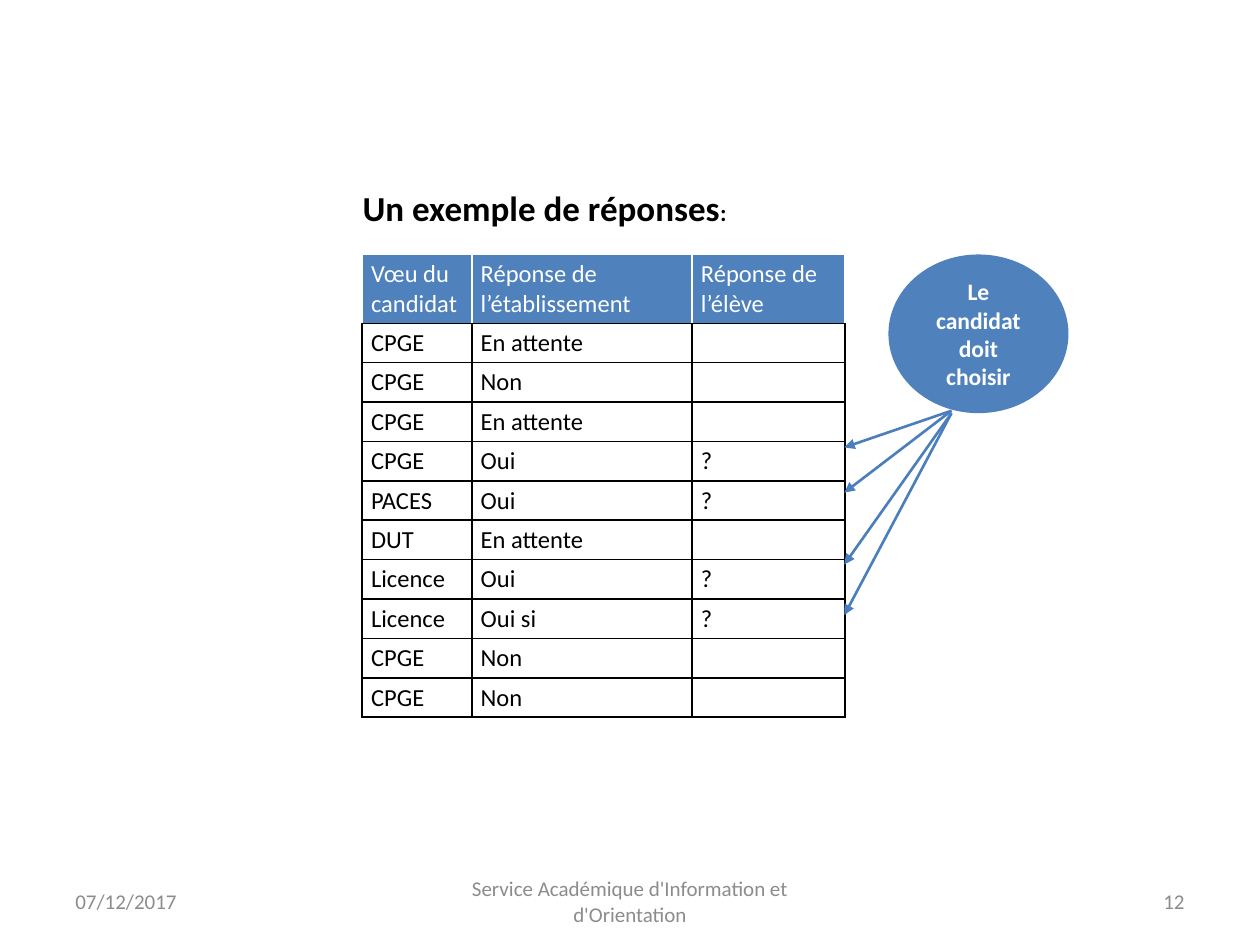
from lxml.etree import SubElement
from pptx import Presentation
from pptx.dml.color import RGBColor
from pptx.enum.shapes import MSO_CONNECTOR, MSO_SHAPE
from pptx.enum.text import MSO_ANCHOR, PP_ALIGN
from pptx.oxml.ns import qn
from pptx.util import Cm, Pt

BLUE = RGBColor(0x4F, 0x81, 0xBD)
ARROW_BLUE = RGBColor(0x4B, 0x7E, 0xBC)
GREY = RGBColor(0x8C, 0x8C, 0x8C)
BLACK = RGBColor(0, 0, 0)
WHITE = RGBColor(0xFF, 0xFF, 0xFF)


def write(frame, text, size=14, color=BLACK, bold=False, align=PP_ALIGN.LEFT):
    frame.word_wrap = True
    paragraph = frame.paragraphs[0]
    paragraph.alignment = align
    if not text:
        SubElement(paragraph._p, qn("a:endParaRPr"), sz=str(size * 100))
        return
    run = paragraph.add_run()
    run.text = text
    run.font.name = "Calibri"
    run.font.size = Pt(size)
    run.font.bold = bold
    run.font.color.rgb = color


def draw_borders(cell, edges):
    properties = cell._tc.get_or_add_tcPr()
    for position, (edge, color) in enumerate(edges.items()):
        border = SubElement(properties, qn("a:" + edge), w=str(Pt(1)))
        fill = SubElement(border, qn("a:solidFill"))
        SubElement(fill, qn("a:srgbClr"), val=str(color))
        properties.insert(position, border)


prs = Presentation()
prs.slide_width = Cm(25.4)
prs.slide_height = Cm(19.05)
slide = prs.slides.add_slide(prs.slide_layouts[6])

footers = [
    ("07/12/2017", 1.27, 5.93, PP_ALIGN.LEFT),
    ("Service Académique d'Information et d'Orientation", 8.68, 8.04, PP_ALIGN.CENTER),
    ("12", 18.2, 5.93, PP_ALIGN.RIGHT),
]
for text, left, width, align in footers:
    footer = slide.shapes.add_textbox(Cm(left), Cm(17.66), Cm(width), Cm(1.01))
    footer.text_frame.vertical_anchor = MSO_ANCHOR.MIDDLE
    write(footer.text_frame, text, size=12, color=GREY, align=align)

answers = [
    ("Vœu du candidat", "Réponse de l’établissement", "Réponse de l’élève"),
    ("CPGE", "En attente", ""),
    ("CPGE", "Non", ""),
    ("CPGE", "En attente", ""),
    ("CPGE", "Oui", "?"),
    ("PACES", "Oui", "?"),
    ("DUT", "En attente", ""),
    ("Licence", "Oui", "?"),
    ("Licence", "Oui si", "?"),
    ("CPGE", "Non", ""),
    ("CPGE", "Non", ""),
]
column_widths = [2.21, 4.44, 3.08]
header_height, row_height = 1.38, 0.79
table = slide.shapes.add_table(
    len(answers), len(column_widths), Cm(7.3), Cm(5.13),
    Cm(sum(column_widths)), Cm(header_height + row_height * (len(answers) - 1)),
).table
for column, width in zip(table.columns, column_widths):
    column.width = Cm(width)
for index, answer in enumerate(answers):
    header = index == 0
    table.rows[index].height = Cm(header_height if header else row_height)
    side = WHITE if header else BLACK
    for cell, text in zip(table.rows[index].cells, answer):
        cell.margin_left = cell.margin_right = Cm(0.18)
        cell.margin_top = cell.margin_bottom = Cm(0.1)
        if header:
            cell.fill.solid()
            cell.fill.fore_color.rgb = BLUE
        else:
            cell.fill.background()
        draw_borders(cell, {"lnL": side, "lnR": side, "lnT": side, "lnB": BLACK})
        write(cell.text_frame, text, color=WHITE if header else BLACK)

choice = slide.shapes.add_shape(MSO_SHAPE.OVAL, Cm(17.91), Cm(5.13), Cm(3.63), Cm(3.2))
choice.shadow.inherit = False
choice.fill.solid()
choice.fill.fore_color.rgb = BLUE
choice.line.fill.background()
choice.text_frame.vertical_anchor = MSO_ANCHOR.MIDDLE
write(choice.text_frame, "Le candidat doit choisir", size=13.5, color=WHITE,
      bold=True, align=PP_ALIGN.CENTER)

for start, end in [(8.28, 9.02), (8.28, 9.93), (8.33, 11.38), (8.33, 12.4)]:
    arrow = slide.shapes.add_connector(
        MSO_CONNECTOR.STRAIGHT, Cm(19.18), Cm(start), Cm(17.02), Cm(end))
    arrow.line.color.rgb = ARROW_BLUE
    arrow.line.width = Pt(1.5)
    SubElement(arrow.line._get_or_add_ln(), qn("a:tailEnd"), type="triangle")
    SubElement(arrow._element.spPr, qn("a:effectLst"))

title = slide.shapes.add_textbox(Cm(7.06), Cm(3.63), Cm(8.89), Cm(1.12))
write(title.text_frame, "Un exemple de réponses", size=20, bold=True)
write(title.text_frame, ":", size=13.5, bold=True)

prs.save("out.pptx")
